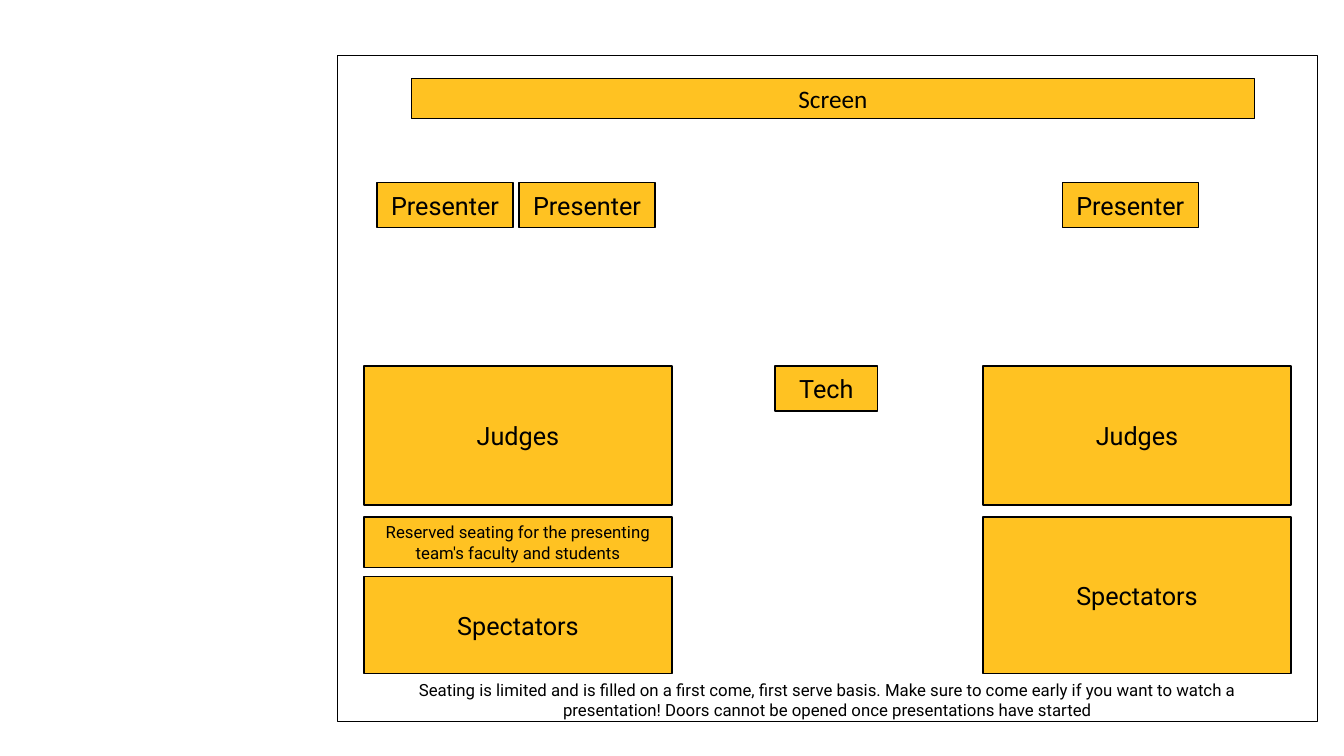
from dataclasses import dataclass

from pptx import Presentation
from pptx.dml.color import RGBColor
from pptx.enum.shapes import MSO_SHAPE as Preset
from pptx.enum.text import MSO_ANCHOR as Anchor, MSO_AUTO_SIZE as AutoSize, PP_ALIGN as Align
from pptx.shapes.autoshape import Shape
from pptx.slide import Slide
from pptx.util import Cm, Pt

GOLD = "FFC222"
BLACK = "000000"

# Shared columns, rows and sizes of the floor plan, in centimetres
LEFT_SIDE, RIGHT_SIDE, SIDE_WIDTH = 9.17, 24.77, 7.77
PRESENTER_TOP, JUDGES_TOP, SEATING_TOP = 4.6, 9.22, 13.03
SMALL_HEIGHT, JUDGES_HEIGHT = 1.14, 3.51
PRESENTER_LEFTS = (9.5, 13.08, 26.77)


@dataclass(frozen=True)
class Area:
    label: str
    left: float
    top: float
    width: float
    height: float
    size: float = 18
    font: str = "Roboto"
    border: float = 1
    anchor: Anchor = Anchor.MIDDLE
    auto_size: AutoSize = AutoSize.NONE


ROOM = Area("", 8.51, 1.4, 24.69, 16.79)
AREAS = [
    Area("Screen", 10.36, 1.98, 21.26, 1.02, font="Calibri", border=0.75,
         anchor=Anchor.TOP, auto_size=AutoSize.SHAPE_TO_FIT_TEXT),
    *(Area("Presenter", left, PRESENTER_TOP, 3.43, SMALL_HEIGHT) for left in PRESENTER_LEFTS),
    Area("Tech", 19.53, JUDGES_TOP, 2.59, SMALL_HEIGHT),
    *(Area("Judges", left, JUDGES_TOP, SIDE_WIDTH, JUDGES_HEIGHT)
      for left in (LEFT_SIDE, RIGHT_SIDE)),
    Area("Reserved seating for the presenting team's faculty and students",
         LEFT_SIDE, SEATING_TOP, SIDE_WIDTH, 1.27, size=12),
    Area("Spectators", LEFT_SIDE, 14.53, SIDE_WIDTH, 2.44),
    Area("Spectators", RIGHT_SIDE, SEATING_TOP, SIDE_WIDTH, 3.94),
]
NOTE = Area(
    "Seating is limited and is filled on a first come, first serve basis. "
    "Make sure to come early if you want to watch a presentation! "
    "Doors cannot be opened once presentations have started",
    LEFT_SIDE, 17.09, 23.37, 1.07, size=12)


def color(value: str) -> RGBColor:
    return RGBColor.from_string(value)


def bounds(area: Area) -> tuple[Cm, Cm, Cm, Cm]:
    return Cm(area.left), Cm(area.top), Cm(area.width), Cm(area.height)


def write_label(box: Shape, area: Area) -> None:
    frame = box.text_frame
    frame.word_wrap = True
    frame.auto_size = area.auto_size
    frame.vertical_anchor = area.anchor
    para = frame.paragraphs[0]
    para.alignment = Align.CENTER
    span = para.add_run()
    span.text = area.label
    span.font.name = area.font
    span.font.size = Pt(area.size)
    span.font.color.rgb = color(BLACK)


def draw_outline(page: Slide, area: Area) -> Shape:
    """Add an unfilled rectangle with a black border."""
    box = page.shapes.add_shape(Preset.RECTANGLE, *bounds(area))
    box.shadow.inherit = False
    box.fill.background()
    box.line.color.rgb = color(BLACK)
    box.line.width = Pt(area.border)
    return box


def draw_area(page: Slide, area: Area) -> None:
    box = draw_outline(page, area)
    box.fill.solid()
    box.fill.fore_color.rgb = color(GOLD)
    write_label(box, area)


def main() -> None:
    deck = Presentation()
    deck.slide_width, deck.slide_height = Cm(33.87), Cm(19.05)
    page = deck.slides.add_slide(deck.slide_layouts[6])
    draw_outline(page, ROOM)
    for area in AREAS:
        draw_area(page, area)
    write_label(page.shapes.add_textbox(*bounds(NOTE)), NOTE)
    deck.save("out.pptx")


if __name__ == "__main__":
    main()
